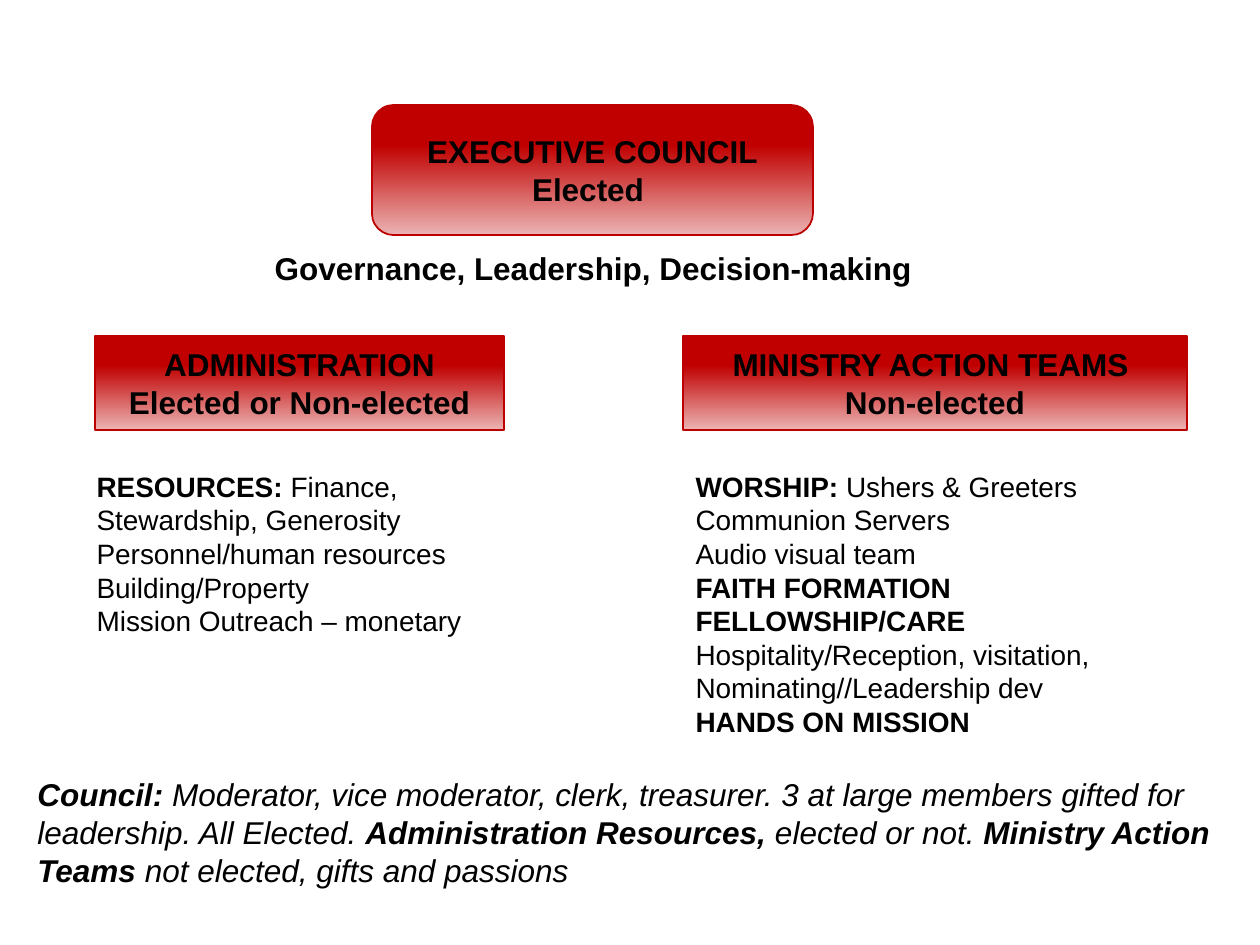
import pptx
import pptx.util
import pptx.dml.color
import pptx.enum.shapes
import pptx.enum.text
import pptx.oxml

SCALE = 914400 / 126  # EMU per px
SHAPES = pptx.enum.shapes.MSO_SHAPE
ALIGN = pptx.enum.text.PP_ALIGN
ANCHOR = pptx.enum.text.MSO_ANCHOR
FIT = pptx.enum.text.MSO_AUTO_SIZE


def px(num):
    return pptx.util.Emu(round(num * SCALE))


def tint(code):
    return pptx.dml.color.RGBColor.from_string(code)


def adorn(item, form):
    for key, val in form.items():
        setattr(item, key, val)


class Chart:
    """House style and the current slide."""
    face = "Arial"
    ink = "000000"
    edge = "BC0000"
    stops = ((0.31, "C00000"), (1, "ECB3B3"))

    def __init__(self, slide):
        self.slide = slide

    def label(self, shape, lines, size, align, anchor=ANCHOR.TOP, italic=False):
        """Fill a shape with lines; *stars* mark the bold parts."""
        frame = shape.text_frame
        adorn(frame, {"word_wrap": True, "auto_size": FIT.NONE,
                      "vertical_anchor": anchor})
        for num, line in enumerate(lines):
            para = frame.add_paragraph() if num else frame.paragraphs[0]
            adorn(para, {"alignment": align, "space_before": pptx.util.Pt(0)})
            for part, words in enumerate(line.split("*")):
                if words:
                    run = para.add_run()
                    run.text = words
                    adorn(run.font, {"name": self.face, "size": pptx.util.Pt(size),
                                     "bold": part % 2 == 1, "italic": italic})
                    run.font.color.rgb = tint(self.ink)

    def place(self, shape, box):
        adorn(shape, dict(zip(("left", "top", "width", "height"), map(px, box))))

    def title(self, box, text):
        shape = self.slide.shapes.title
        self.place(shape, box)
        self.label(shape, [text], 18, ALIGN.LEFT)

    def body(self, index, box, lines):
        shape = self.slide.placeholders[index]
        self.place(shape, box)
        self.label(shape, lines, 16, ALIGN.LEFT)
        # Plain lines: no bullet, no hanging indent
        for para in shape.text_frame.paragraphs:
            props = para._p.get_or_add_pPr()
            props.set("marL", "0")
            props.set("indent", "0")
            props.append(pptx.oxml.parse_xml(
                '<a:buNone xmlns:a="http://schemas.openxmlformats.org/drawingml/2006/main"/>'))

    def block(self, kind, box, lines):
        shape = self.slide.shapes.add_shape(kind, *map(px, box))
        shape.shadow.inherit = False
        shape.fill.gradient()
        shape.fill.gradient_angle = 270
        for stop, (spot, code) in zip(shape.fill.gradient_stops, self.stops):
            stop.position = spot
            stop.color.rgb = tint(code)
        shape.line.color.rgb = tint(self.edge)
        shape.line.width = pptx.util.Pt(1)
        self.label(shape, lines, 18, ALIGN.CENTER, ANCHOR.MIDDLE)

    def note(self, box, text):
        shape = self.slide.shapes.add_textbox(*map(px, box))
        self.label(shape, [text], 18, ALIGN.LEFT, italic=True)


def main():
    deck = pptx.Presentation()
    adorn(deck, {"slide_width": px(1260), "slide_height": px(945)})
    chart = Chart(deck.slides.add_slide(deck.slide_layouts[3]))

    # Council at the top
    chart.block(SHAPES.ROUNDED_RECTANGLE, (372, 105, 441, 130),
                ["*EXECUTIVE COUNCIL*", "*Elected *"])
    chart.title((262, 243, 664, 50), "*Governance, Leadership, Decision-making*")

    # Two branches
    chart.block(SHAPES.RECTANGLE, (95, 336, 409, 94),
                ["*ADMINISTRATION Elected or Non-elected*"])
    chart.block(SHAPES.RECTANGLE, (683, 336, 504, 94),
                ["*MINISTRY ACTION TEAMS *", "*Non-elected*"])

    # Duties of each branch
    chart.body(1, (84, 463, 472, 217), [
        "*RESOURCES: *Finance, Stewardship, Generosity",
        "Personnel/human resources",
        "Building/Property",
        "Mission Outreach – monetary"])
    chart.body(2, (683, 463, 447, 318), [
        "*WORSHIP: *Ushers & Greeters",
        "Communion Servers",
        "Audio visual team",
        "*FAITH FORMATION*",
        "*FELLOWSHIP/CARE*",
        "Hospitality/Reception, visitation,",
        "Nominating//Leadership dev",
        "*HANDS ON MISSION*"])

    # Summary at the foot
    chart.note((25, 769, 1239, 127),
               "*Council: *Moderator, vice moderator, clerk, treasurer. 3 at large "
               "members gifted for leadership. All Elected. *Administration Resources, *"
               "elected or not. *Ministry Action Teams *not elected, gifts and passions")

    deck.save("out.pptx")


if __name__ == "__main__":
    main()
